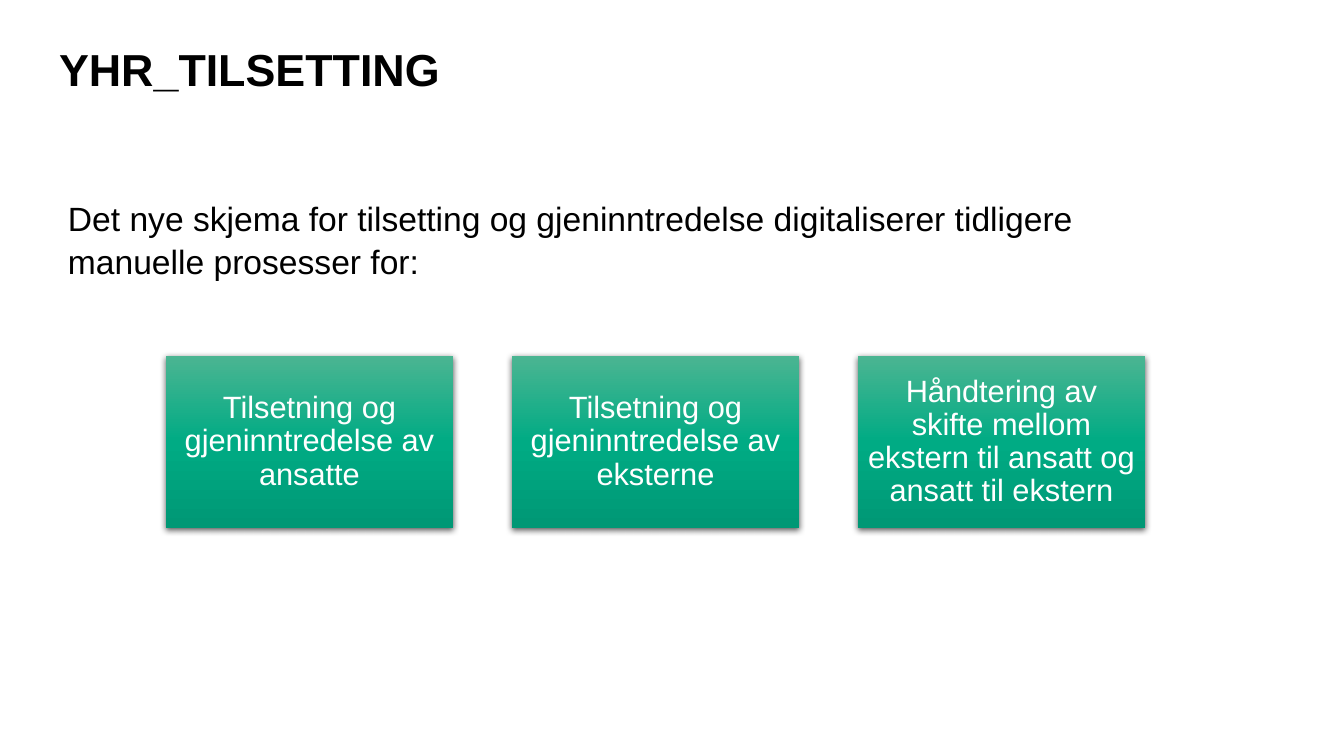
from lxml import etree
from pptx import Presentation
from pptx import util as u
from pptx.dml.color import RGBColor
from pptx.enum import shapes, text
from pptx.oxml import ns

TITLE = "YHR_TILSETTING"
INTRO = ("Det nye skjema for tilsetting og gjeninntredelse digitaliserer "
         "tidligere manuelle prosesser for:")
PROCESSES = [
    "Tilsetning og gjeninntredelse av ansatte",
    "Tilsetning og gjeninntredelse av eksterne",
    "Håndtering av skifte mellom ekstern til ansatt og ansatt til ekstern",
]
COLORS = {"text": "000000", "box_text": "FFFFFF", "shadow": "000000",
          "light": "4BB592", "green": "00AB84", "dark": "009875"}
GRADIENT = [(0, "light"), (50, "green"), (100, "dark")]
FONT = "Arial"
SLIDE_W, SLIDE_H = 1344, 756
TITLE_BOX = (59, 48, 1224, 78)
INTRO_BOX = (58, 190, 1089, 139)
BOX_X, BOX_Y, BOX_W, BOX_H, BOX_STEP = 166, 356, 287, 172, 346


def px(n):
    return u.Emu(round(n * 914400 / 100.8))


def put_text(sp, words, size, color, spacing, bold=False, inset=None):
    tf = sp.text_frame
    tf.word_wrap = True
    if inset is not None:
        tf.margin_left = tf.margin_right = px(inset)
        tf.margin_top = tf.margin_bottom = px(inset)
    tf.text = words
    p = tf.paragraphs[0]
    p.line_spacing = spacing
    p.font.name = FONT
    p.font.size = u.Pt(size)
    p.font.bold = bold
    p.font.color.rgb = RGBColor.from_string(COLORS[color])
    return tf, p


def add_color(parent, name):
    return etree.SubElement(parent, ns.qn("a:srgbClr"), val=COLORS[name])


def style_box(sp):
    sp.line.fill.background()
    sp.fill.gradient()
    sp.fill.gradient_angle = 270
    sp.shadow.inherit = False
    props = sp.element.spPr
    stops = props.find(ns.qn("a:gradFill")).find(ns.qn("a:gsLst"))
    for old in list(stops):
        stops.remove(old)
    for percent, name in GRADIENT:
        add_color(etree.SubElement(stops, ns.qn("a:gs"), pos=str(percent * 1000)), name)
    shadow = etree.SubElement(
        props.find(ns.qn("a:effectLst")), ns.qn("a:outerShdw"),
        blurRad=str(u.Pt(4.5)), dist=str(u.Pt(1.5)), dir="5400000",
        algn="ctr", rotWithShape="0")
    etree.SubElement(add_color(shadow, "shadow"), ns.qn("a:alpha"), val="63000")


def main():
    prs = Presentation()
    prs.slide_width, prs.slide_height = px(SLIDE_W), px(SLIDE_H)
    s = prs.slides.add_slide(prs.slide_layouts[6])

    intro = s.shapes.add_textbox(*map(px, INTRO_BOX))
    put_text(intro, INTRO, 24, "text", 1.07)
    title = s.shapes.add_textbox(*map(px, TITLE_BOX))
    put_text(title, TITLE, 32, "text", 0.9, bold=True, inset=0)

    for i, process in enumerate(PROCESSES):
        place = (BOX_X + i * BOX_STEP, BOX_Y, BOX_W, BOX_H)
        sp = s.shapes.add_shape(shapes.MSO_SHAPE.RECTANGLE, *map(px, place))
        style_box(sp)
        tf, p = put_text(sp, process, 22, "box_text", 0.9, inset=9)
        tf.vertical_anchor = text.MSO_ANCHOR.MIDDLE
        p.alignment = text.PP_ALIGN.CENTER

    prs.save("out.pptx")


if __name__ == "__main__":
    main()
